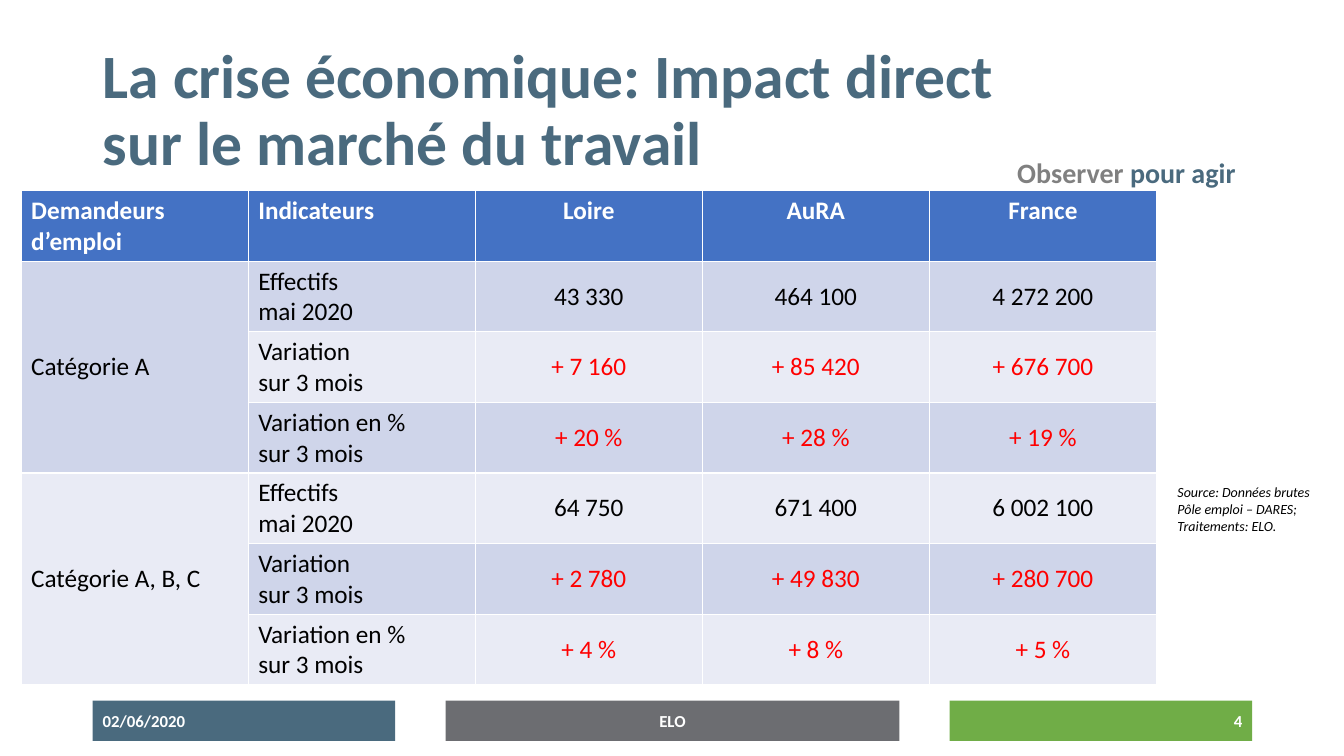
from dataclasses import dataclass

from pptx import Presentation
from pptx.dml.color import RGBColor as Rgb
from pptx.enum.shapes import MSO_SHAPE as Shape
from pptx.enum.text import MSO_ANCHOR as Anchor, MSO_AUTO_SIZE as AutoSize, PP_ALIGN as Align
from pptx.util import Inches, Pt


@dataclass(frozen=True)
class Theme:
    font: str = "Calibri"
    slate: str = "4A6A7E"
    grey: str = "6C6D71"
    green: str = "70AD47"
    motto_grey: str = "808080"
    header: str = "4472C4"
    bands: tuple = ("CFD5EA", "E9EBF5")
    white: str = "FFFFFF"
    black: str = "000000"
    red: str = "FF0000"
    title_size: int = 44
    motto_size: int = 20
    table_size: int = 18
    footer_size: int = 12
    source_size: int = 10


theme = Theme()


def style(span, size, color, bold=False, italic=False):
    font = span.font
    font.name, font.size, font.bold, font.italic = theme.font, Pt(size), bold, italic
    font.color.rgb = Rgb.from_string(color)


def write(frame, text, size, color, align=Align.LEFT, **emphasis):
    """Fill a text frame, one paragraph per line of text."""
    frame.text = text
    for para in frame.paragraphs:
        para.alignment = align
        for span in para.runs:
            style(span, size, color, **emphasis)


deck = Presentation()
deck.slide_width, deck.slide_height = Inches(13.33), Inches(7.5)
page = deck.slides.add_slide(deck.slide_layouts[5])

# Motto
motto = page.shapes.add_textbox(Inches(9.99), Inches(1.49), Inches(2.39), Inches(0.44))
motto.text_frame.word_wrap = False
para = motto.text_frame.paragraphs[0]
for text, color in (("Observer ", theme.motto_grey), ("pour agir", theme.slate)):
    span = para.add_run()
    span.text = text
    style(span, theme.motto_size, color, bold=True)

# Footer bars
footer = (
    (0.92, 3, theme.slate, "02/06/2020", Align.LEFT),
    (4.42, 4.5, theme.grey, "ELO", Align.CENTER),
    (9.42, 3, theme.green, "4", Align.RIGHT),
)
for left, width, color, text, align in footer:
    bar = page.shapes.add_shape(Shape.RECTANGLE, Inches(left), Inches(6.95), Inches(width), Inches(0.4))
    bar.shadow.inherit = False
    bar.fill.solid()
    bar.fill.fore_color.rgb = Rgb.from_string(color)
    bar.line.fill.background()
    bar.text_frame.vertical_anchor = Anchor.MIDDLE
    write(bar.text_frame, text, theme.footer_size, theme.white, align, bold=True)

# Title
title = page.shapes.title
title.left, title.top, title.width, title.height = Inches(0.92), Inches(0.4), Inches(11.5), Inches(1.45)
title.text_frame.auto_size = AutoSize.NONE
title.text_frame.vertical_anchor = Anchor.TOP
write(title.text_frame, "La crise économique: Impact direct\nsur le marché du travail",
      theme.title_size, theme.slate, bold=True)
for para in title.text_frame.paragraphs:
    para.line_spacing = 0.9

# Job seekers table
indicators = ("Effectifs\nmai 2020", "Variation\nsur 3 mois", "Variation en %\nsur 3 mois")
categories = {
    "Catégorie A": (
        ("43 330", "464 100", "4 272 200"),
        ("+ 7 160", "+ 85 420", "+ 676 700"),
        ("+ 20 %", "+ 28 %", "+ 19 %"),
    ),
    "Catégorie A, B, C": (
        ("64 750", "671 400", "6 002 100"),
        ("+ 2 780", "+ 49 830", "+ 280 700"),
        ("+ 4 %", "+ 8 %", "+ 5 %"),
    ),
}
rows = [("Demandeurs d’emploi", "Indicateurs", "Loire", "AuRA", "France")]
for category, figures in categories.items():
    for index, (indicator, values) in enumerate(zip(indicators, figures)):
        rows.append((category if index == 0 else "", indicator, *values))

table = page.shapes.add_table(len(rows), len(rows[0]), Inches(0.21), Inches(1.89),
                              Inches(11.26), Inches(4.9)).table
for row_index, row in enumerate(rows):
    is_header = row_index == 0
    fill = theme.header if is_header else theme.bands[(row_index - 1) % 2]
    for column, text in enumerate(row):
        cell = table.cell(row_index, column)
        cell.fill.solid()
        cell.fill.fore_color.rgb = Rgb.from_string(fill)
        if not is_header and column != 1:
            cell.vertical_anchor = Anchor.MIDDLE
        color = theme.white if is_header else theme.red if text.startswith("+") else theme.black
        align = Align.CENTER if column > 1 else Align.LEFT
        write(cell.text_frame, text, theme.table_size, color, align, bold=is_header)

for first in range(1, len(rows), len(indicators)):
    table.cell(first, 0).merge(table.cell(first + len(indicators) - 1, 0))

# Source
source = page.shapes.add_textbox(Inches(11.58), Inches(4.75), Inches(1.58), Inches(0.61))
source.text_frame.word_wrap = True
write(source.text_frame, "Source: Données brutes Pôle emploi – DARES;\nTraitements: ELO.",
      theme.source_size, theme.black, italic=True)

deck.save("out.pptx")
